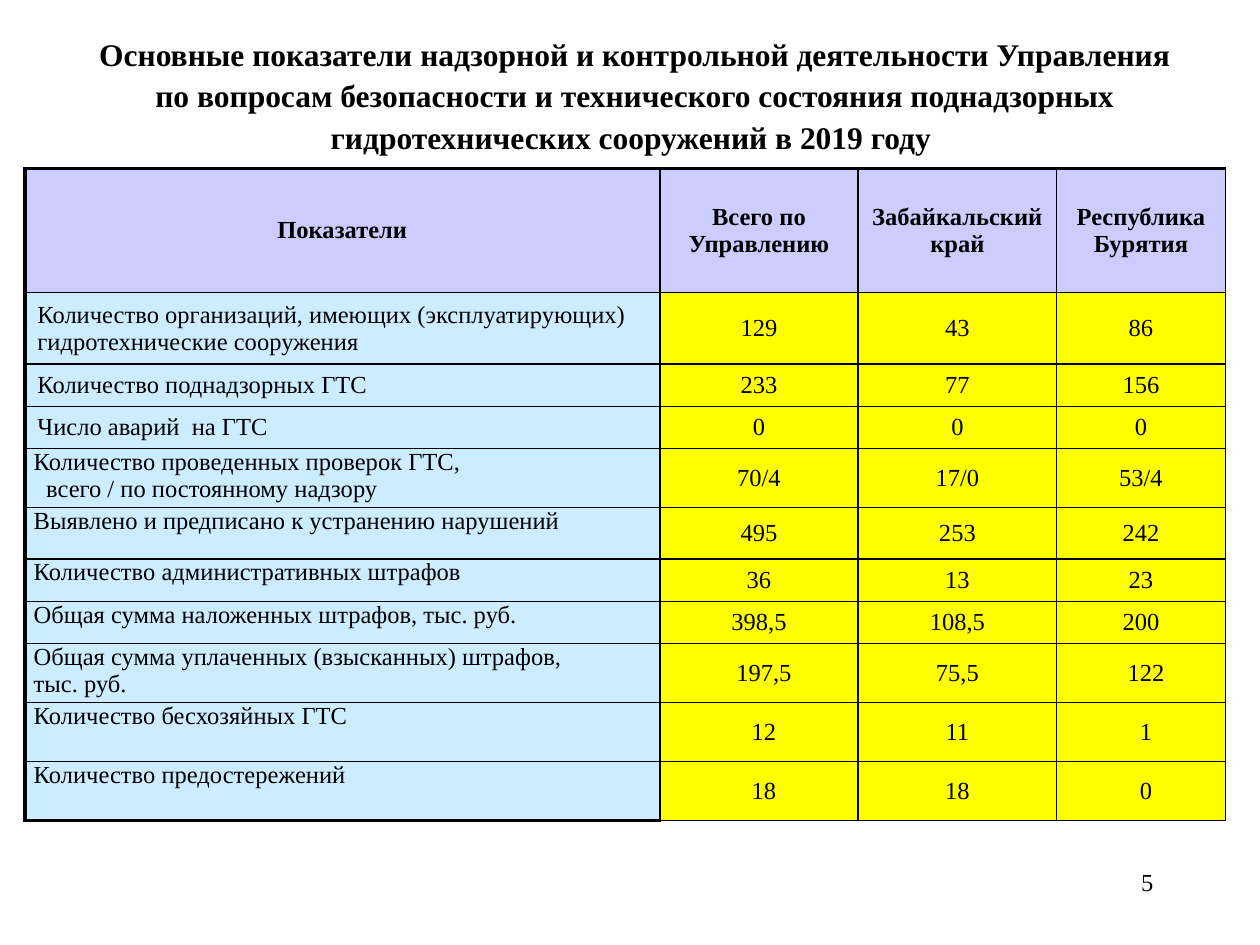
from lxml import etree
from pptx import Presentation
from pptx.dml.color import RGBColor
from pptx.enum.text import MSO_ANCHOR, PP_ALIGN
from pptx.oxml.ns import qn
from pptx.util import Cm, Pt

LEFT, CENTER, RIGHT = PP_ALIGN.LEFT, PP_ALIGN.CENTER, PP_ALIGN.RIGHT
TOP, MIDDLE = MSO_ANCHOR.TOP, MSO_ANCHOR.MIDDLE

BLACK = RGBColor(0x00, 0x00, 0x00)
LILAC = RGBColor(0xCC, 0xCC, 0xFF)
SKY = RGBColor(0xCC, 0xEC, 0xFF)
YELLOW = RGBColor(0xFF, 0xFF, 0x00)
FONT = "Times New Roman"
THIN, THICK = Pt(1), Pt(2.25)

TITLE = ("Основные показатели надзорной и контрольной деятельности Управления "
         "по вопросам безопасности и технического состояния поднадзорных "
         "гидротехнических сооружений в 2019 году ")
COL_WIDTHS = [12.8, 4, 4, 3.4]
HEADER_HEIGHT = 2.5
HEADERS = ["Показатели", "Всего по Управлению", "Забайкальский край",
           "Республика Бурятия"]
# height in cm, indicator, values
ROWS = [
    (1.43, "Количество организаций, имеющих (эксплуатирующих) "
           "гидротехнические сооружения", "129", "43", "86"),
    (0.85, "Количество поднадзорных ГТС", "233", "77", "156"),
    (0.85, "Число аварий  на ГТС", "0", "0", "0"),
    (1.19, "Количество проведенных проверок ГТС,\n"
           "всего / по постоянному надзору", "70/4", "17/0", "53/4"),
    (1.04, "Выявлено и предписано к устранению нарушений", "495", "253", "242"),
    (0.85, "Количество административных штрафов", "36", "13", "23"),
    (0.85, "Общая сумма наложенных штрафов, тыс. руб.", "398,5", "108,5", "200"),
    (1.19, "Общая сумма уплаченных (взысканных) штрафов,\nтыс. руб.",
     "197,5", "75,5", "122"),
    (1.19, "Количество бесхозяйных ГТС", "12", "11", "1"),
    (1.19, "Количество предостережений", "18", "18", "0"),
]
FIRST_TIGHT_ROW = 4     # from here the indicators sit at the top of the cell
CHECKS_ROW = 4          # its second line is indented
FIRST_SHIFTED_ROW = 8   # from here the outer values are indented


def write(tf, text, size=14, bold=False, align=LEFT, spacing=None, indents=()):
    """Write one paragraph per line; indents are left margins in cm by line."""
    for i, line in enumerate(text.split("\n")):
        p = tf.paragraphs[0] if i == 0 else tf.add_paragraph()
        p.alignment = align
        if spacing:
            p.line_spacing = spacing
        if i < len(indents):
            p._p.get_or_add_pPr().set("marL", str(Cm(indents[i])))
        r = p.add_run()
        r.text = line
        r.font.name, r.font.size, r.font.bold = FONT, Pt(size), bold
        r.font.color.rgb = BLACK


def add_text(s, box, text, anchor=TOP, **fmt):
    tf = s.shapes.add_textbox(*map(Cm, box)).text_frame
    tf.word_wrap = True
    tf.vertical_anchor = anchor
    write(tf, text, **fmt)


def set_borders(cell, **widths):
    tcPr = cell._tc.get_or_add_tcPr()
    for side in "LRTB":
        ln = etree.SubElement(tcPr, qn(f"a:ln{side}"),
                              w=str(widths.get(side, THIN)))
        fill = etree.SubElement(ln, qn("a:solidFill"))
        etree.SubElement(fill, qn("a:srgbClr"), val=str(BLACK))


def format_cell(cell, row, col, last_row):
    widths = {}
    if col == 0:
        widths["L"] = THICK
    if row == 0:
        widths["T"] = THICK
    if row == last_row and col == 0:
        widths["B"] = THICK
    set_borders(cell, **widths)
    cell.fill.solid()
    cell.fill.fore_color.rgb = LILAC if row == 0 else YELLOW if col else SKY
    tight = col == 0 and row >= FIRST_TIGHT_ROW
    cell.vertical_anchor = TOP if tight else MIDDLE
    if tight:
        cell.margin_left = cell.margin_right = Cm(0.18)
        cell.margin_top = cell.margin_bottom = 0


def add_indicator_table(s, left, top):
    heights = [HEADER_HEIGHT] + [row[0] for row in ROWS]
    texts = [HEADERS] + [row[1:] for row in ROWS]
    table = s.shapes.add_table(len(texts), len(COL_WIDTHS), Cm(left), Cm(top),
                               Cm(sum(COL_WIDTHS)), Cm(sum(heights))).table
    for column, width in zip(table.columns, COL_WIDTHS):
        column.width = Cm(width)
    for i, (height, line) in enumerate(zip(heights, texts)):
        table.rows[i].height = Cm(height)
        for j, text in enumerate(line):
            cell = table.cell(i, j)
            format_cell(cell, i, j, len(ROWS))
            indents = ()
            if j == 0 and i == CHECKS_ROW:
                indents = (0, 0.25)
            elif j in (1, 3) and i >= FIRST_SHIFTED_ROW:
                indents = (0.2,)
            write(cell.text_frame, text, bold=i == 0, indents=indents,
                  align=CENTER if i == 0 or j else LEFT)


def main():
    prs = Presentation()
    prs.slide_width, prs.slide_height = Cm(25.4), Cm(19.05)
    s = prs.slides.add_slide(prs.slide_layouts[6])
    add_text(s, (18.2, 17.35, 5.3, 1.27), "5", align=RIGHT)
    add_text(s, (1.4, 0.72, 22.8, 2.34), TITLE, anchor=MIDDLE, size=18,
             bold=True, align=CENTER, spacing=1.09)
    add_indicator_table(s, 0.5, 3.4)
    prs.save("out.pptx")


if __name__ == "__main__":
    main()
